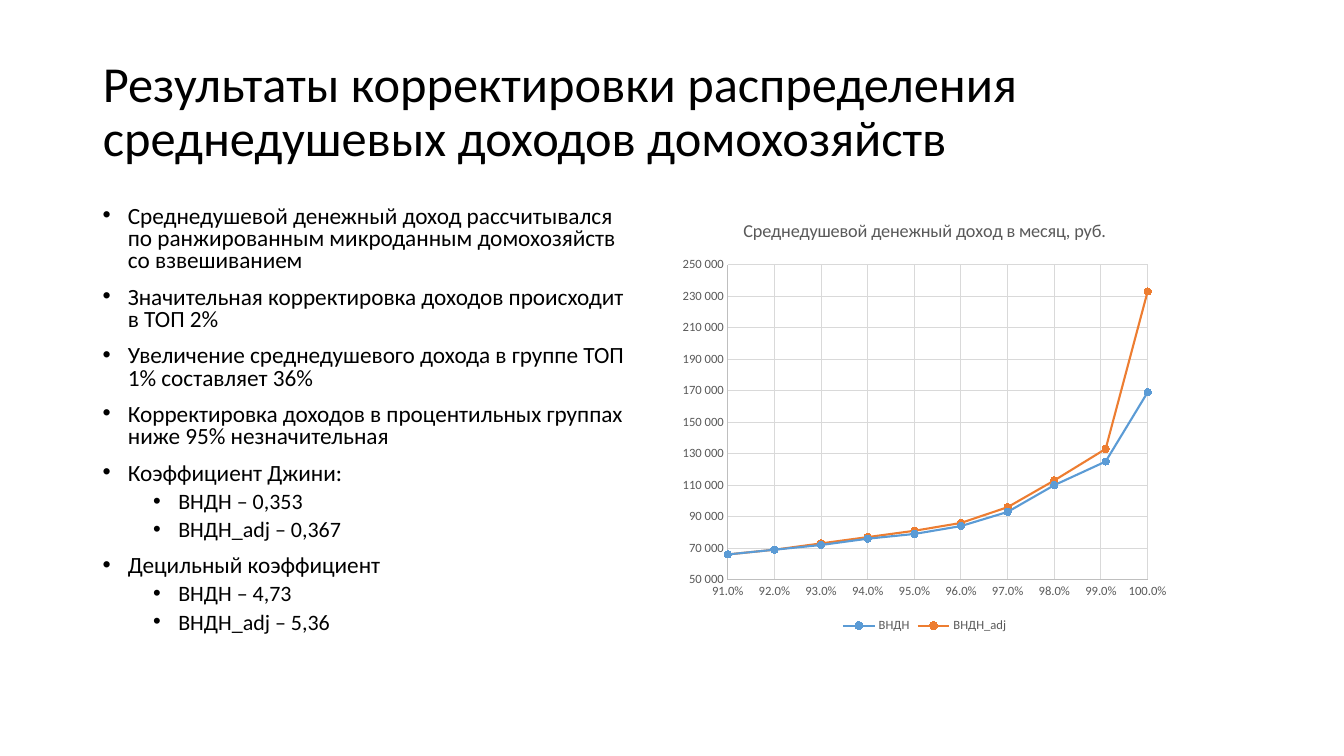
import pptx
import pptx.chart.data
import pptx.dml.color
import pptx.enum.chart
import pptx.enum.text
import pptx.util
from lxml import etree
from pptx.oxml.ns import qn

Inches, Pt = pptx.util.Inches, pptx.util.Pt
RGBColor = pptx.dml.color.RGBColor

TITLE = "Результаты корректировки распределения среднедушевых доходов домохозяйств"
BULLETS = [
    (0, "Среднедушевой денежный доход рассчитывался по ранжированным микроданным домохозяйств со взвешиванием"),
    (0, "Значительная корректировка доходов происходит в ТОП 2%"),
    (0, "Увеличение среднедушевого дохода в группе ТОП 1% составляет 36%"),
    (0, "Корректировка доходов в процентильных группах ниже 95% незначительная"),
    (0, "Коэффициент Джини:"),
    (1, "ВНДН – 0,353"),
    (1, "ВНДН_adj – 0,367"),
    (0, "Децильный коэффициент"),
    (1, "ВНДН – 4,73"),
    (1, "ВНДН_adj – 5,36"),
]
CHART_TITLE = "Среднедушевой денежный доход в месяц, руб."
PERCENTILES = [0.91, 0.92, 0.93, 0.94, 0.95, 0.96, 0.97, 0.98, 0.991, 1]

FONT = "Calibri"
BLACK = RGBColor(0x00, 0x00, 0x00)
GRAY = RGBColor(0x59, 0x59, 0x59)
AXIS_GRAY = RGBColor(0xBF, 0xBF, 0xBF)
GRID_GRAY = RGBColor(0xD9, 0xD9, 0xD9)
BLUE = RGBColor(0x5B, 0x9B, 0xD5)
ORANGE = RGBColor(0xED, 0x7D, 0x31)

INCOMES = [
    ("ВНДН", BLUE, [66000, 69000, 72000, 76000, 79000, 84000, 93000, 110000, 125000, 169000]),
    ("ВНДН_adj", ORANGE, [66000, 69000, 73000, 77000, 81000, 86000, 96000, 113000, 133000, 233000]),
]
# level: (font size, space before, left margin in inches)
LEVELS = {0: (16.6, 10, 0.25), 1: (15.7, 5, 0.75)}


def style_font(font, size, color):
    font.name = FONT
    font.size = Pt(size)
    font.bold = False
    font.color.rgb = color


def style_line(line, color, width):
    line.color.rgb = color
    line.width = Pt(width)


def add_title(page):
    title = page.shapes.title
    title.left, title.top = Inches(0.92), Inches(0.4)
    title.width, title.height = Inches(11.5), Inches(1.45)
    frame = title.text_frame
    frame.text = TITLE
    frame.vertical_anchor = pptx.enum.text.MSO_ANCHOR.MIDDLE
    para = frame.paragraphs[0]
    para.alignment = pptx.enum.text.PP_ALIGN.LEFT
    para.line_spacing = 0.9
    style_font(para.runs[0].font, 36, BLACK)


def add_bullets(page):
    box = page.shapes.add_textbox(Inches(0.92), Inches(2), Inches(5.43), Inches(4.76))
    frame = box.text_frame
    frame.word_wrap = True
    frame.text = "\n".join(text for level, text in BULLETS)
    for para, (level, text) in zip(frame.paragraphs, BULLETS):
        size, space, margin = LEVELS[level]
        para.level = level
        para.line_spacing = 0.8
        para.space_before = Pt(space)
        style_font(para.runs[0].font, size, BLACK)
        properties = para._p.get_or_add_pPr()
        properties.set("marL", str(Inches(margin)))
        properties.set("indent", str(Inches(-0.25)))
        etree.SubElement(properties, qn("a:buFont"), typeface="Arial")
        etree.SubElement(properties, qn("a:buChar"), char="•")


def style_axis(axis, low, high, step, number_format):
    axis.minimum_scale, axis.maximum_scale = low, high
    axis.major_unit = step
    axis.major_tick_mark = pptx.enum.chart.XL_TICK_MARK.NONE
    axis.minor_tick_mark = pptx.enum.chart.XL_TICK_MARK.NONE
    axis.has_major_gridlines = True
    style_line(axis.major_gridlines.format.line, GRID_GRAY, 0.75)
    style_line(axis.format.line, AXIS_GRAY, 0.75)
    style_font(axis.tick_labels.font, 9, GRAY)
    axis.tick_labels.number_format = number_format
    axis.tick_labels.number_format_is_linked = False


def add_income_chart(page):
    data = pptx.chart.data.XyChartData()
    for name, color, values in INCOMES:
        series = data.add_series(name)
        for percentile, value in zip(PERCENTILES, values):
            series.add_data_point(percentile, value)
    chart = page.shapes.add_chart(
        pptx.enum.chart.XL_CHART_TYPE.XY_SCATTER_LINES,
        Inches(6.67), Inches(2), Inches(5), Inches(4.32), data).chart
    style_font(chart.font, 10, BLACK)

    chart.has_title = True
    chart.chart_title.include_in_layout = False
    heading = chart.chart_title.text_frame
    heading.text = CHART_TITLE
    style_font(heading.paragraphs[0].runs[0].font, 13, GRAY)

    chart.has_legend = True
    chart.legend.position = pptx.enum.chart.XL_LEGEND_POSITION.BOTTOM
    chart.legend.include_in_layout = False
    style_font(chart.legend.font, 9, GRAY)

    style_axis(chart.category_axis, 0.91, 1, 0.01, "0.0%")
    style_axis(chart.value_axis, 50000, 250000, 20000, "#\\ ##0".replace("#\\ ##0", "###\\ 000"))

    plot = chart.plots[0]
    plot.vary_by_categories = False
    for series, (name, color, values) in zip(plot.series, INCOMES):
        series.smooth = False
        style_line(series.format.line, color, 1.5)
        marker = series.marker
        marker.style = pptx.enum.chart.XL_MARKER_STYLE.CIRCLE
        marker.size = 5
        marker.format.fill.solid()
        marker.format.fill.fore_color.rgb = color
        style_line(marker.format.line, color, 0.75)


def main():
    deck = pptx.Presentation()
    deck.slide_width, deck.slide_height = Inches(13.33), Inches(7.5)
    page = deck.slides.add_slide(deck.slide_layouts[5])
    add_title(page)
    add_bullets(page)
    add_income_chart(page)
    deck.save("out.pptx")


if __name__ == "__main__":
    main()
